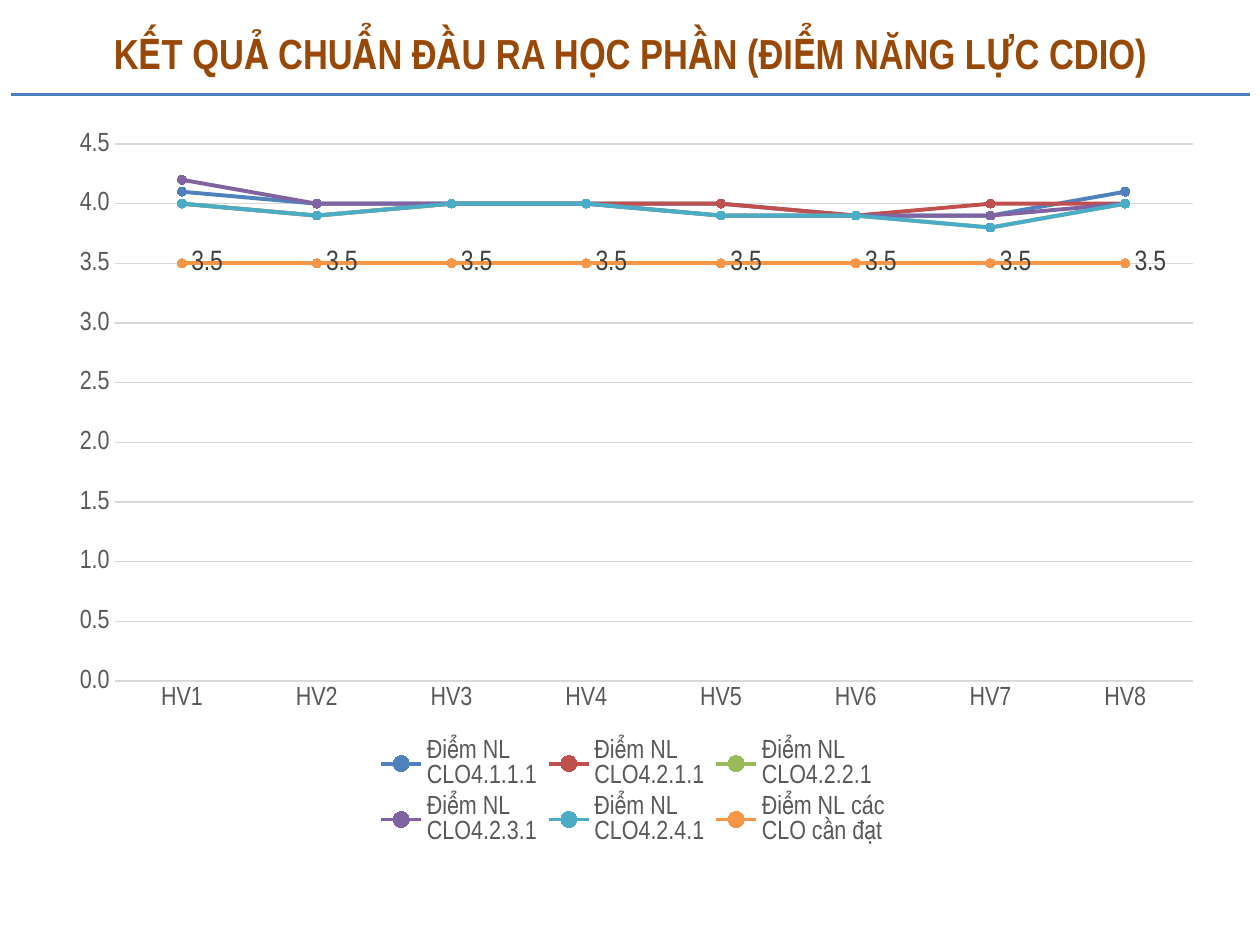
from pptx import Presentation, util as u
from pptx.chart.data import CategoryChartData
from pptx.dml.color import RGBColor
from pptx.enum import chart as ce, shapes, text
from pptx.oxml import parse_xml
from pptx.oxml.ns import nsdecls, qn

FACE = "Arial Narrow"


def style(font, size, color, bold=False):
    form = {"name": FACE, "size": u.Pt(size), "bold": bold}
    for key, val in form.items():
        setattr(font, key, val)
    font.color.rgb = RGBColor.from_string(color)


def place(part, index, inner, **box):
    """Fix a chart part at shares of the chart's size."""
    for old in part.findall(qn("c:layout")):
        part.remove(old)
    tags = '<c:layoutTarget val="inner"/>' if inner else ""
    tags += '<c:xMode val="edge"/><c:yMode val="edge"/>'
    tags += "".join(f'<c:{key} val="{val}"/>' for key, val in box.items())
    part.insert(index, parse_xml(
        f'<c:layout {nsdecls("c")}><c:manualLayout>{tags}</c:manualLayout></c:layout>'))


pres = Presentation()
pres.slide_width, pres.slide_height = u.Inches(10), u.Inches(7.5)
slide = pres.slides.add_slide(pres.slide_layouts[6])

# Rule under the title
rule = slide.shapes.add_connector(
    shapes.MSO_CONNECTOR.STRAIGHT, *map(u.Inches, (0.09, 0.75, 9.92, 0.75)))
rule.line.color.rgb = RGBColor.from_string("4B7EBC")
rule.line.width = u.Pt(2)
rule.element.spPr.append(parse_xml(f'<a:effectLst {nsdecls("a")}/>'))

# Title
title = slide.shapes.add_textbox(*map(u.Inches, (0.17, 0.08, 9.67, 0.67)))
frame = title.text_frame
frame.word_wrap = True
frame.vertical_anchor = text.MSO_ANCHOR.MIDDLE
para = frame.paragraphs[0]
para.alignment = text.PP_ALIGN.CENTER
run = para.add_run()
run.text = "KẾT QUẢ CHUẨN ĐẦU RA HỌC PHẦN (ĐIỂM NĂNG LỰC CDIO)"
style(run.font, 24, "984807", True)

# Scores: name, line colour, values for HV1 to HV8
scores = [
    ("Điểm NL\nCLO4.1.1.1", "4F81BD", (4.1, 4, 4, 4, 4, 3.9, 3.9, 4.1)),
    ("Điểm NL\nCLO4.2.1.1", "C0504D", (4, 3.9, 4, 4, 4, 3.9, 4, 4)),
    ("Điểm NL\nCLO4.2.2.1", "9BBB59", (4, 3.9, 4, 4, 3.9, 3.9, 3.8, 4)),
    ("Điểm NL\nCLO4.2.3.1", "8064A2", (4.2, 4, 4, 4, 3.9, 3.9, 3.9, 4)),
    ("Điểm NL\nCLO4.2.4.1", "4BACC6", (4, 3.9, 4, 4, 3.9, 3.9, 3.8, 4)),
    ("Điểm NL các \nCLO cần đạt", "F79646", (3.5,) * 8),
]
data = CategoryChartData(number_format="0.0")
data.categories = [f"HV{n}" for n in range(1, 9)]
for name, color, vals in scores:
    data.add_series(name, vals)
chart = slide.shapes.add_chart(
    ce.XL_CHART_TYPE.LINE_MARKERS, *map(u.Inches, (0.45, 0.91, 9.2, 5.84)), data).chart
chart.has_title = False
style(chart.font, 10, "000000")
plot = chart.plots[0]
plot.vary_by_categories = False

# Lines and markers
for line, (name, color, vals) in zip(plot.series, scores):
    tint = RGBColor.from_string(color)
    line.smooth = False
    line.format.line.color.rgb = tint
    line.format.line.width = u.Pt(2.25)
    mark = line.marker
    mark.style, mark.size = ce.XL_MARKER_STYLE.CIRCLE, 5
    mark.format.fill.solid()
    mark.format.fill.fore_color.rgb = tint
    mark.format.line.color.rgb = tint

# Labels on the required score, the last line
tags = plot.series[len(scores) - 1].data_labels
form = {"show_value": True, "number_format": "0.0", "number_format_is_linked": False,
        "position": ce.XL_LABEL_POSITION.RIGHT}
for key, val in form.items():
    setattr(tags, key, val)
style(tags.font, 16, "404040")

# Axes
cat, val_ax = chart.category_axis, chart.value_axis
for axis in (cat, val_ax):
    axis.major_tick_mark = axis.minor_tick_mark = ce.XL_TICK_MARK.NONE
    style(axis.tick_labels.font, 15, "595959")
form = {"minimum_scale": 0, "maximum_scale": 4.5, "major_unit": 0.5,
        "has_major_gridlines": True}
for key, val in form.items():
    setattr(val_ax, key, val)
val_ax.tick_labels.number_format = "0.0"
val_ax.tick_labels.number_format_is_linked = False
val_ax.format.line.fill.background()
for line in (cat.format.line, val_ax.major_gridlines.format.line):
    line.color.rgb = RGBColor.from_string("D9D9D9")
    line.width = u.Pt(0.75)

# Legend and plot area
chart.has_legend = True
key_box = chart.legend
key_box.position = ce.XL_LEGEND_POSITION.BOTTOM
key_box.include_in_layout = False
style(key_box.font, 15, "595959")
place(chart.element.xpath("c:chart/c:plotArea")[0], 0, True, x=0.05, y=0.04, w=0.93, h=0.73)
place(chart.element.xpath("c:chart/c:legend")[0], 1, False, x=0.27, y=0.84, w=0.46, h=0.16)

pres.save("out.pptx")
